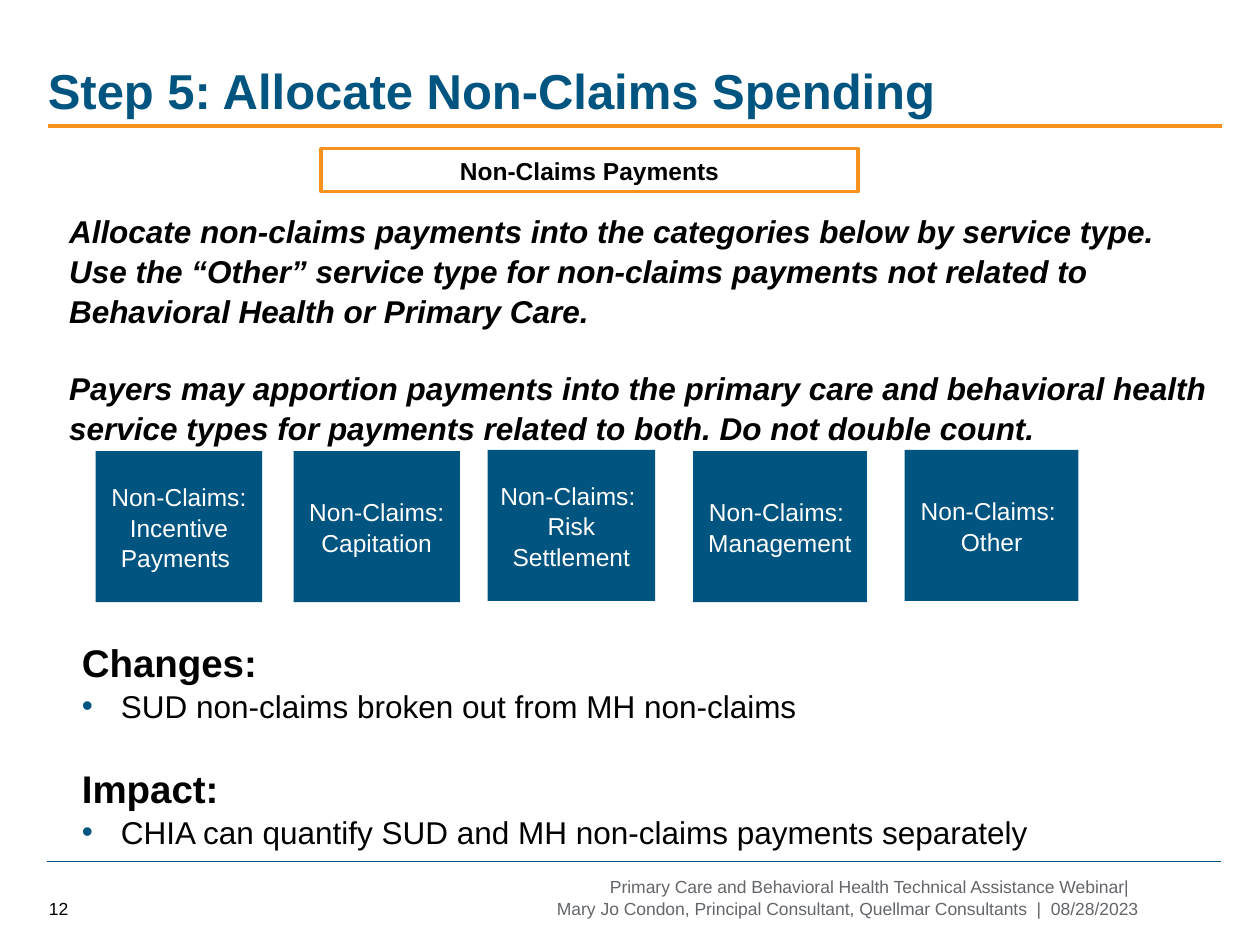
"""Build the non-claims allocation step slide."""
from dataclasses import dataclass

from lxml.etree import SubElement
from pptx import Presentation
from pptx.dml.color import RGBColor
from pptx.enum.shapes import MSO_CONNECTOR, MSO_SHAPE
from pptx.enum.text import MSO_ANCHOR, MSO_AUTO_SIZE, PP_ALIGN
from pptx.oxml.ns import qn
from pptx.util import Inches, Pt

NAVY = RGBColor(0x00, 0x54, 0x80)
ORANGE = RGBColor(0xF7, 0x92, 0x1E)
GRAY = RGBColor(0x63, 0x66, 0x6A)
BLACK = RGBColor(0x00, 0x00, 0x00)
WHITE = RGBColor(0xFF, 0xFF, 0xFF)
FONT = "Arial"
LINE_SPACING = 1.05
SLIDE_WIDTH, SLIDE_HEIGHT = Inches(10), Inches(7.5)
COLUMN, ROW = SLIDE_WIDTH / 100, SLIDE_HEIGHT / 75
INDENT = Inches(0.31)


@dataclass(frozen=True)
class Area:
    """A region measured in grid columns and rows."""
    left: float
    top: float
    width: float
    height: float

    def emu(self) -> tuple[int, int, int, int]:
        """Return the region in slide units."""
        return (round(self.left * COLUMN), round(self.top * ROW),
                round(self.width * COLUMN), round(self.height * ROW))


@dataclass(frozen=True)
class Line:
    """One paragraph and its look."""
    text: str
    size: float
    color: RGBColor = BLACK
    bold: bool = False
    italic: bool = False
    bullet: bool = False
    gap: float = 0


@dataclass(frozen=True)
class Category:
    """A payment category and its card."""
    name: str
    area: Area


@dataclass(frozen=True)
class Rule:
    """A horizontal line across the slide."""
    left: float
    right: float
    row: float
    color: RGBColor
    weight: float


CATEGORIES = [
    Category("Incentive Payments ", Area(7.6, 35.8, 13.2, 12)),
    Category("Capitation", Area(23.3, 35.8, 13.2, 12)),
    Category("Risk Settlement", Area(38.7, 35.7, 13.3, 12)),
    Category("Management", Area(55, 35.8, 13.8, 12)),
    Category("Other", Area(71.8, 35.7, 13.8, 12)),
]
RULES = [Rule(3.7, 96.9, 68.4, NAVY, 0.75), Rule(3.8, 97, 10, ORANGE, 2.25)]
GUIDANCE = [
    Line("Allocate non-claims payments into the categories below by service type. "
         "Use the “Other” service type for non-claims payments not related to "
         "Behavioral Health or Primary Care.", 18, bold=True, italic=True),
    Line("Payers may apportion payments into the primary care and behavioral health "
         "service types for payments related to both. Do not double count.",
         18, bold=True, italic=True, gap=21.7),
]
SUMMARY = [
    Line("Changes:", 22, bold=True),
    Line("SUD non-claims broken out from MH non-claims", 18, bullet=True),
    Line("Impact:", 22, bold=True, gap=21.7),
    Line("CHIA can quantify SUD and MH non-claims payments separately", 18, bullet=True),
]
FOOTER = [
    Line("Primary Care and Behavioral Health Technical Assistance Webinar|  ", 10, GRAY),
    Line("Mary Jo Condon, Principal Consultant, Quellmar Consultants  |  08/28/2023", 10, GRAY),
]


def set_bullet(paragraph, bullet: bool) -> None:
    """Give a paragraph a hanging bullet or none."""
    properties = paragraph._p.get_or_add_pPr()
    properties.set("marL", str(INDENT if bullet else 0))
    properties.set("indent", str(-INDENT if bullet else 0))
    if bullet:
        tint = SubElement(properties, qn("a:buClr"))
        SubElement(tint, qn("a:srgbClr"), val=str(NAVY))
        SubElement(properties, qn("a:buFont"), typeface=FONT)
        SubElement(properties, qn("a:buChar"), char="•")
    else:
        SubElement(properties, qn("a:buNone"))


def write(shape, lines: list[Line], anchor=MSO_ANCHOR.TOP, align=PP_ALIGN.LEFT) -> None:
    """Fill a shape with formatted paragraphs."""
    frame = shape.text_frame
    frame.word_wrap = True
    frame.auto_size = MSO_AUTO_SIZE.NONE
    frame.vertical_anchor = anchor
    for index, line in enumerate(lines):
        paragraph = frame.add_paragraph() if index else frame.paragraphs[0]
        set_bullet(paragraph, line.bullet)
        paragraph.alignment = align
        paragraph.line_spacing = LINE_SPACING
        paragraph.space_before = Pt(line.gap)
        run = paragraph.add_run()
        run.text = line.text
        run.font.name = FONT
        run.font.size = Pt(line.size)
        run.font.bold = line.bold
        run.font.italic = line.italic
        run.font.color.rgb = line.color


def place(shape, area: Area) -> None:
    """Move a placeholder to a region."""
    shape.left, shape.top, shape.width, shape.height = area.emu()


def add_text(slide, area: Area, lines: list[Line], **layout) -> None:
    """Add a text box."""
    write(slide.shapes.add_textbox(*area.emu()), lines, **layout)


def add_box(slide, area: Area, fill: RGBColor, lines: list[Line], anchor, border=None) -> None:
    """Add a filled rectangle with centred text."""
    box = slide.shapes.add_shape(MSO_SHAPE.RECTANGLE, *area.emu())
    box.shadow.inherit = False
    box.fill.solid()
    box.fill.fore_color.rgb = fill
    if border is None:
        box.line.fill.background()
    else:
        box.line.color.rgb = border
        box.line.width = Pt(2)
    write(box, lines, anchor, PP_ALIGN.CENTER)


def add_rule(slide, rule: Rule) -> None:
    """Add a horizontal line."""
    height = round(rule.row * ROW)
    connector = slide.shapes.add_connector(
        MSO_CONNECTOR.STRAIGHT, round(rule.left * COLUMN), height,
        round(rule.right * COLUMN), height)
    connector.line.color.rgb = rule.color
    connector.line.width = Pt(rule.weight)
    SubElement(connector._element.spPr, qn("a:effectLst"))


def main() -> None:
    """Create and save the presentation."""
    deck = Presentation()
    deck.slide_width, deck.slide_height = SLIDE_WIDTH, SLIDE_HEIGHT
    slide = deck.slides.add_slide(deck.slide_layouts[1])
    heading, summary = slide.placeholders
    place(heading, Area(2.8, 4.3, 87.8, 5.7))
    write(heading, [Line("Step 5: Allocate Non-Claims Spending", 28, NAVY, bold=True)],
          MSO_ANCHOR.BOTTOM)
    place(summary, Area(5.5, 50, 89, 17.5))
    write(summary, SUMMARY)
    for rule in RULES:
        add_rule(slide, rule)
    add_box(slide, Area(25.5, 11.8, 42.6, 3.4), WHITE,
            [Line("Non-Claims Payments", 14, bold=True)], MSO_ANCHOR.TOP, ORANGE)
    add_text(slide, Area(4.5, 16.2, 92.6, 19.2), GUIDANCE)
    for category in CATEGORIES:
        add_box(slide, category.area, NAVY,
                [Line("Non-Claims: ", 14, WHITE), Line(category.name, 14, WHITE)],
                MSO_ANCHOR.MIDDLE)
    add_text(slide, Area(2.9, 70.1, 5.8, 4), [Line("12", 10)], anchor=MSO_ANCHOR.MIDDLE)
    add_text(slide, Area(42.6, 69.2, 48.7, 4), FOOTER,
             anchor=MSO_ANCHOR.MIDDLE, align=PP_ALIGN.RIGHT)
    deck.save("out.pptx")


if __name__ == "__main__":
    main()
